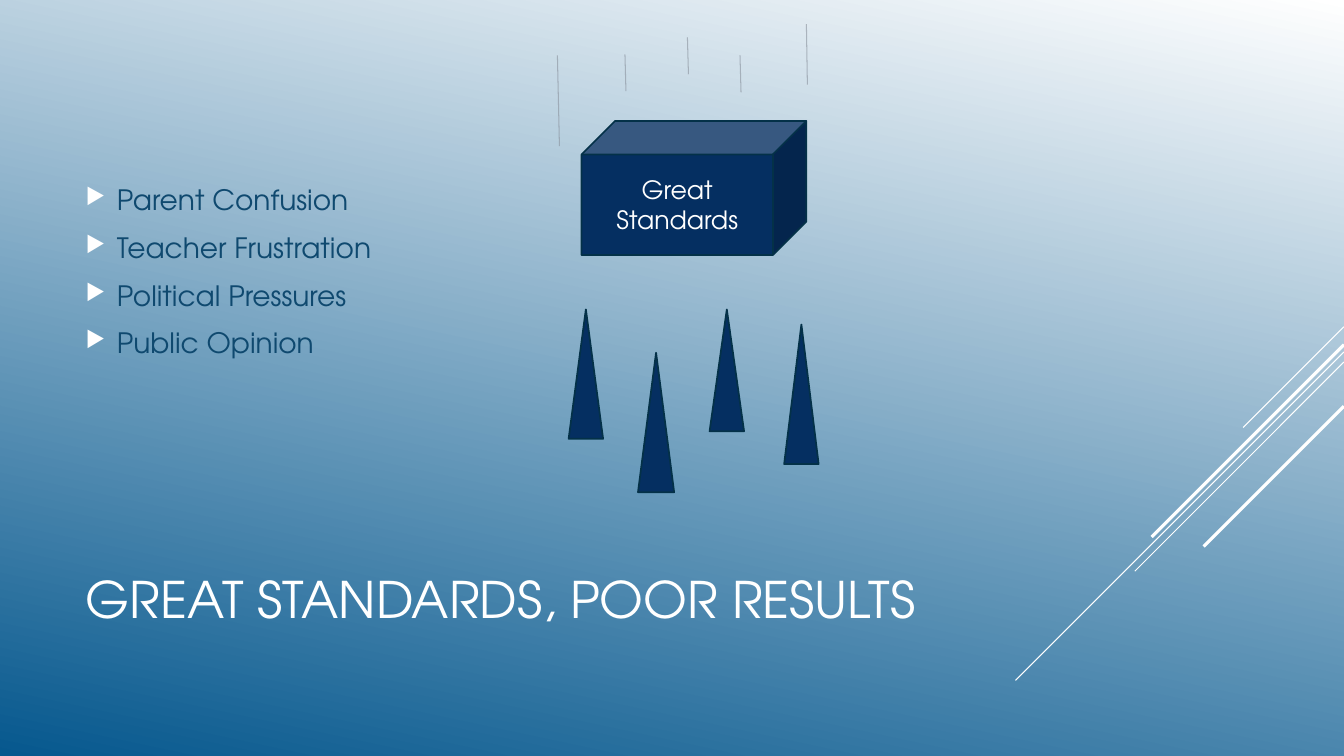
"""Build the slide "Great Standards, Poor Results"."""
from dataclasses import dataclass

from lxml import etree
from pptx import Presentation
from pptx import util as u
from pptx.dml.color import RGBColor
from pptx.enum import shapes, text
from pptx.oxml import ns

COLUMNS, ROWS = 160, 90
CELL = u.Inches(1) / 12
FONT = "TeX Gyre Adventor"
COLORS = {
    "white": "FFFFFF",
    "sky": "06588E",
    "points": "0F496F",
    "solid": "052F61",
    "edge": "043148",
    "motion": "89919C",
}


@dataclass(frozen=True)
class Box:
    col: float
    row: float
    cols: float
    rows: float


@dataclass(frozen=True)
class Stroke:
    col: float
    row: float
    cols: float
    rows: float
    color: str
    weight: float = 0.75
    opacity: int = 100


def streak(row: float, run: float, weight: float = 0.75) -> Stroke:
    """Describe a diagonal that falls from the right edge at 45 degrees."""
    return Stroke(COLUMNS, row, -run, run, "white", weight)


def motion(col: float, row: float, rows: float, drift: float = 0.12) -> Stroke:
    """Describe a falling-motion line above the cube."""
    return Stroke(col, row, drift, rows, "motion", opacity=60)


TITLE = Box(9, 63.84, 112, 14.88)
BODY = Box(9, 4.32, 120.12, 55.92)
CUBE = Box(69.24, 14.4, 26.76, 15.96)
SPIKES = [
    Box(67.7, 36.84, 4.1, 15.4),
    Box(75.96, 42, 4.3, 16.6),
    Box(84.48, 36.84, 4.1, 14.5),
    Box(93.36, 38.64, 4.1, 16.6),
]
STREAKS = [
    streak(38.9, 12),
    streak(41.9, 39.1),
    streak(43.1, 24.9),
    streak(41.04, 22.9, 2.25),
    streak(48.36, 16.7, 2.25),
]
MOTIONS = [
    motion(66.36, 6.6, 10.8, 0.24),
    motion(74.4, 6.48, 4.36),
    motion(81.84, 4.44, 4.4),
    motion(88.1, 6.6, 4.4),
    motion(96, 2.88, 7.2),
]
POINTS = ["Parent Confusion", "Teacher Frustration", "Political Pressures", "Public Opinion"]


def grid(cells: float) -> u.Emu:
    """Convert grid cells to a length."""
    return u.Emu(round(cells * CELL))


def place(box: Box) -> tuple[u.Emu, ...]:
    """Return left, top, width and height of a grid box."""
    return grid(box.col), grid(box.row), grid(box.cols), grid(box.rows)


def rgb(name: str) -> RGBColor:
    """Look up a named colour."""
    return RGBColor.from_string(COLORS[name])


def add_run(paragraph, wording: str, size: float, color: str) -> None:
    """Append one formatted run."""
    run = paragraph.add_run()
    run.text = wording
    run.font.name = FONT
    run.font.size = u.Pt(size)
    run.font.color.rgb = rgb(color)


def set_frame(frame) -> None:
    """Wrap the text and centre it vertically."""
    frame.word_wrap = True
    frame.auto_size = text.MSO_AUTO_SIZE.NONE
    frame.vertical_anchor = text.MSO_ANCHOR.MIDDLE


def add_stroke(slide, stroke: Stroke) -> None:
    """Draw a straight line without a shadow."""
    line = slide.shapes.add_connector(
        shapes.MSO_CONNECTOR.STRAIGHT,
        grid(stroke.col),
        grid(stroke.row),
        grid(stroke.col + stroke.cols),
        grid(stroke.row + stroke.rows),
    )
    line.line.color.rgb = rgb(stroke.color)
    line.line.width = u.Pt(stroke.weight)
    properties = line._element.spPr
    if stroke.opacity < 100:
        color = properties.find(".//" + ns.qn("a:srgbClr"))
        etree.SubElement(color, ns.qn("a:alpha"), val=str(stroke.opacity * 1000))
    etree.SubElement(properties, ns.qn("a:effectLst"))


def add_solid(slide, kind: shapes.MSO_SHAPE, box: Box):
    """Draw a dark blue preset shape."""
    solid = slide.shapes.add_shape(kind, *place(box))
    solid.shadow.inherit = False
    solid.fill.solid()
    solid.fill.fore_color.rgb = rgb("solid")
    solid.line.color.rgb = rgb("edge")
    solid.line.width = u.Pt(1.25)
    return solid


def add_bullet(paragraph) -> None:
    """Give a paragraph a white triangle bullet and a hanging indent."""
    properties = paragraph._p.get_or_add_pPr()
    indent = u.Inches(0.31)
    properties.set("marL", str(indent))
    properties.set("indent", str(-indent))
    color = etree.SubElement(properties, ns.qn("a:buClr"))
    etree.SubElement(color, ns.qn("a:srgbClr"), val=COLORS["white"])
    etree.SubElement(properties, ns.qn("a:buSzPct"), val="80000")
    etree.SubElement(properties, ns.qn("a:buChar"), char="▶")


def add_points(slide) -> None:
    """Write the bulleted list."""
    frame = slide.shapes.add_textbox(*place(BODY)).text_frame
    set_frame(frame)
    for index, point in enumerate(POINTS):
        paragraph = frame.add_paragraph() if index else frame.paragraphs[0]
        paragraph.space_before = u.Pt(4)
        paragraph.space_after = u.Pt(6)
        add_bullet(paragraph)
        add_run(paragraph, point, 20, "points")


def set_title(slide) -> None:
    """Move and fill the title placeholder."""
    title = slide.shapes.title
    title.left, title.top, title.width, title.height = place(TITLE)
    set_frame(title.text_frame)
    paragraph = title.text_frame.paragraphs[0]
    paragraph.alignment = text.PP_ALIGN.LEFT
    add_run(paragraph, "GREAT STANDARDS, POOR RESULTS", 36, "white")


def set_background(slide) -> None:
    """Fade the background from white to blue."""
    fill = slide.background.fill
    fill.gradient()
    fill.gradient_angle = 360 - 102
    for stop, position, color in zip(fill.gradient_stops, (0, 1), ("white", "sky")):
        stop.position = position
        stop.color.rgb = rgb(color)


def main() -> None:
    """Build and save the presentation."""
    deck = Presentation()
    deck.slide_width, deck.slide_height = grid(COLUMNS), grid(ROWS)
    slide = deck.slides.add_slide(deck.slide_layouts[5])
    set_background(slide)
    for stroke in STREAKS:
        add_stroke(slide, stroke)
    set_title(slide)
    add_points(slide)
    cube = add_solid(slide, shapes.MSO_SHAPE.CUBE, CUBE)
    set_frame(cube.text_frame)
    label = cube.text_frame.paragraphs[0]
    label.alignment = text.PP_ALIGN.CENTER
    add_run(label, "Great Standards", 18, "white")
    for spike in SPIKES:
        add_solid(slide, shapes.MSO_SHAPE.ISOSCELES_TRIANGLE, spike)
    for stroke in MOTIONS:
        add_stroke(slide, stroke)
    deck.save("out.pptx")


if __name__ == "__main__":
    main()
